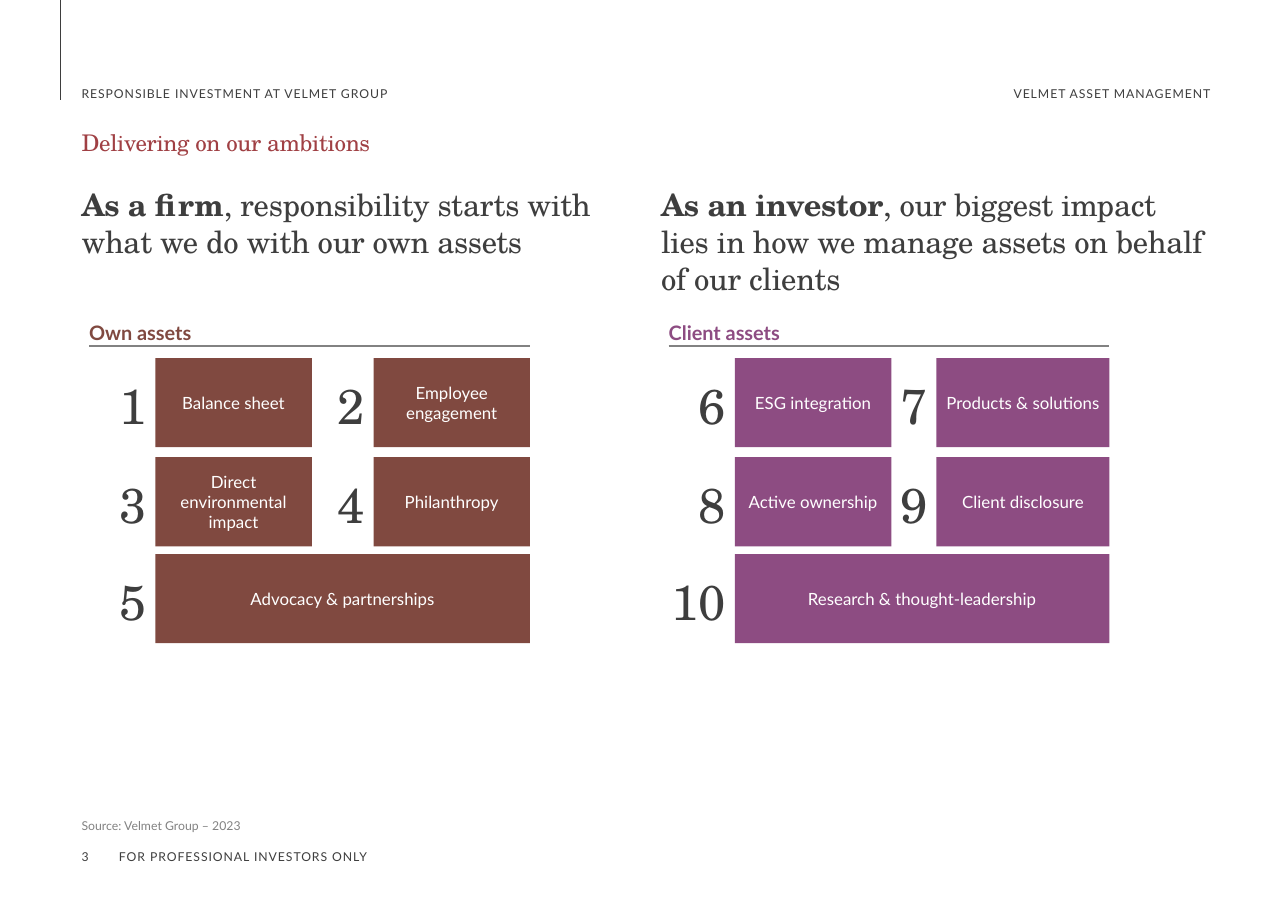
"""Build the slide on own assets and client assets in responsible investment."""
import pptx
import pptx.dml.color
import pptx.enum.shapes
import pptx.enum.text
import pptx.oxml.ns
import pptx.util
from lxml import etree

RGBColor = pptx.dml.color.RGBColor
Inches = pptx.util.Inches
Pt = pptx.util.Pt
ALIGN = pptx.enum.text.PP_ALIGN
ANCHOR = pptx.enum.text.MSO_ANCHOR

INK = RGBColor(0x3E, 0x3E, 0x3E)
GREY = RGBColor(0x82, 0x82, 0x82)
RED = RGBColor(0xA0, 0x40, 0x44)
BROWN = RGBColor(0x80, 0x49, 0x40)
PURPLE = RGBColor(0x8D, 0x4C, 0x82)
WHITE = RGBColor(0xFF, 0xFF, 0xFF)
SANS, SERIF = "Lato", "TeX Gyre Schola"

TITLE = "Delivering on our ambitions"
SECTION = "RESPONSIBLE INVESTMENT AT VELMET GROUP"
COMPANY = "VELMET ASSET MANAGEMENT"
AUDIENCE = "FOR PROFESSIONAL INVESTORS ONLY"
SOURCE = "Source: Velmet Group – 2023"
PAGE = "3"

PANELS = [
    {
        "left": 0.81, "statement_left": 0.74, "color": BROWN,
        "statement": ("As a firm", ", responsibility starts with what we do with our own assets"),
        "heading": "Own assets", "first_number": 1, "second_width": 1.42,
        "rows": [("Balance sheet", "Employee engagement"),
                 ("Direct environmental impact", "Philanthropy"),
                 ("Advocacy & partnerships",)],
    },
    {
        "left": 6.07, "statement_left": 6, "color": PURPLE,
        "statement": ("As an investor",
                      ", our biggest impact lies in how we manage assets on behalf of our clients"),
        "heading": "Client assets", "first_number": 6, "second_width": 1.57,
        "rows": [("ESG integration", "Products & solutions"),
                 ("Active ownership", "Client disclosure"),
                 ("Research & thought-leadership",)],
    },
]

SLIDE_W, SLIDE_H = 11.69, 8.27
MARGIN = 0.74
HEADER_TOP, FOOTER_TOP, SMALL_H = 0.76, 7.68, 0.16
PANEL_W, NUMBER_COLUMN, FIRST_W = 4, 0.6, 1.42
ROW_TOPS, BOX_H = (3.25, 4.15, 5.03), 0.81
DIGIT_W, NUMBER_GAP, NUMBER_DROP = 0.26, 0.08, 0.12


def write(frame, runs, size, color, font=SANS, align=ALIGN.LEFT, anchor=ANCHOR.TOP,
          tracking=0, bold=False, line_spacing=None, after=0, inset=0, wrap=True):
    """Fill a text frame with one formatted paragraph."""
    frame.word_wrap = wrap
    frame.auto_size = pptx.enum.text.MSO_AUTO_SIZE.NONE
    frame.vertical_anchor = anchor
    frame.margin_left = frame.margin_right = Inches(inset)
    frame.margin_top = frame.margin_bottom = Inches(inset)
    paragraph = frame.paragraphs[0]
    paragraph.alignment = align
    paragraph.line_spacing = line_spacing
    paragraph.space_before, paragraph.space_after = Pt(0), Pt(after)
    paragraph.font.size, paragraph.font.name = Pt(size), font
    paragraph.font.color.rgb = color
    if len(runs) == 1:
        paragraph.font.bold = bold
    for position, text in enumerate(runs):
        run = paragraph.add_run()
        run.text = text
        if len(runs) > 1:
            run.font.bold = position == 0
        if tracking:
            run._r.get_or_add_rPr().set("spc", str(round(tracking * 100)))


def place(shape, left, top, width, height):
    """Move a placeholder and set its size."""
    shape.left, shape.top = Inches(left), Inches(top)
    shape.width, shape.height = Inches(width), Inches(height)


def add_text(slide, area, runs, size, color, **style):
    """Add a text box over an area given in inches."""
    box = slide.shapes.add_textbox(*map(Inches, area))
    write(box.text_frame, runs, size, color, **style)


def add_rule(slide, start, end, color, width):
    """Add a plain straight line."""
    rule = slide.shapes.add_connector(
        pptx.enum.shapes.MSO_CONNECTOR.STRAIGHT, *map(Inches, start + end))
    rule.line.color.rgb, rule.line.width = color, Pt(width)
    etree.SubElement(rule._element.spPr, pptx.oxml.ns.qn("a:effectLst"))


def add_topic(slide, number, topic, left, top, width, color):
    """Add a filled box with its number on the left."""
    box = slide.shapes.add_shape(pptx.enum.shapes.MSO_SHAPE.RECTANGLE,
                                 *map(Inches, (left, top, width, BOX_H)))
    box.shadow.inherit = False
    box.fill.solid()
    box.fill.fore_color.rgb = color
    box.line.fill.background()
    write(box.text_frame, [topic], 11, WHITE, align=ALIGN.CENTER, anchor=ANCHOR.MIDDLE,
          after=5, inset=0.04)
    number_w = DIGIT_W * len(str(number))
    add_text(slide, (left - NUMBER_GAP - number_w, top + NUMBER_DROP, number_w, 0.57),
             [str(number)], 32, INK, font=SERIF, align=ALIGN.RIGHT, line_spacing=1.07,
             after=12, wrap=False)


def add_panel(slide, panel):
    """Add a statement, a ruled heading and the numbered topics below it."""
    left, color = panel["left"], panel["color"]
    right = left + PANEL_W
    add_text(slide, (panel["statement_left"], 1.69, 4.96, 1.18), panel["statement"], 20, INK,
             font=SERIF, tracking=-0.2, after=6)
    add_text(slide, (left, 2.9, PANEL_W, 0.23), [panel["heading"]], 13, color, bold=True,
             line_spacing=1.07, after=12)
    add_rule(slide, (left, 3.14), (right, 3.14), GREY, 1.5)
    number = panel["first_number"]
    first_left = left + NUMBER_COLUMN
    second_left = right - panel["second_width"]
    for top, topics in zip(ROW_TOPS, panel["rows"]):
        if len(topics) == 1:
            cells = [(first_left, right - first_left)]
        else:
            cells = [(first_left, FIRST_W), (second_left, panel["second_width"])]
        for topic, (box_left, width) in zip(topics, cells):
            add_topic(slide, number, topic, box_left, top, width, color)
            number += 1


def main():
    """Build and save the slide."""
    deck = pptx.Presentation()
    deck.slide_width, deck.slide_height = Inches(SLIDE_W), Inches(SLIDE_H)
    slide = deck.slides.add_slide(deck.slide_layouts[1])
    title, section = slide.shapes.title, slide.placeholders[1]

    place(title, MARGIN, 1.14, 10.24, 0.31)
    write(title.text_frame, [TITLE], 15, RED, font=SERIF, tracking=-0.2, line_spacing=Pt(20))

    place(section, MARGIN, HEADER_TOP, 4.93, SMALL_H)
    properties = section.text_frame.paragraphs[0]._p.get_or_add_pPr()
    properties.set("marL", "0")
    properties.set("indent", "0")
    etree.SubElement(properties, pptx.oxml.ns.qn("a:buNone"))
    write(section.text_frame, [SECTION], 8, INK, anchor=ANCHOR.BOTTOM, tracking=0.6)

    add_text(slide, (7.77, HEADER_TOP, 3.22, SMALL_H), [COMPANY], 8, INK,
             align=ALIGN.RIGHT, anchor=ANCHOR.BOTTOM, tracking=0.6)
    add_rule(slide, (0.55, 0), (0.55, 0.91), INK, 0.5)
    for panel in PANELS:
        add_panel(slide, panel)
    add_text(slide, (MARGIN, 7.43, 10.12, 0.13), [SOURCE], 8, GREY, anchor=ANCHOR.BOTTOM)
    add_text(slide, (MARGIN, FOOTER_TOP, 0.32, SMALL_H), [PAGE], 8, INK, anchor=ANCHOR.BOTTOM)
    add_text(slide, (1.08, FOOTER_TOP, 3.96, SMALL_H), [AUDIENCE], 8, INK,
             anchor=ANCHOR.BOTTOM, tracking=0.6)
    deck.save("out.pptx")


if __name__ == "__main__":
    main()
